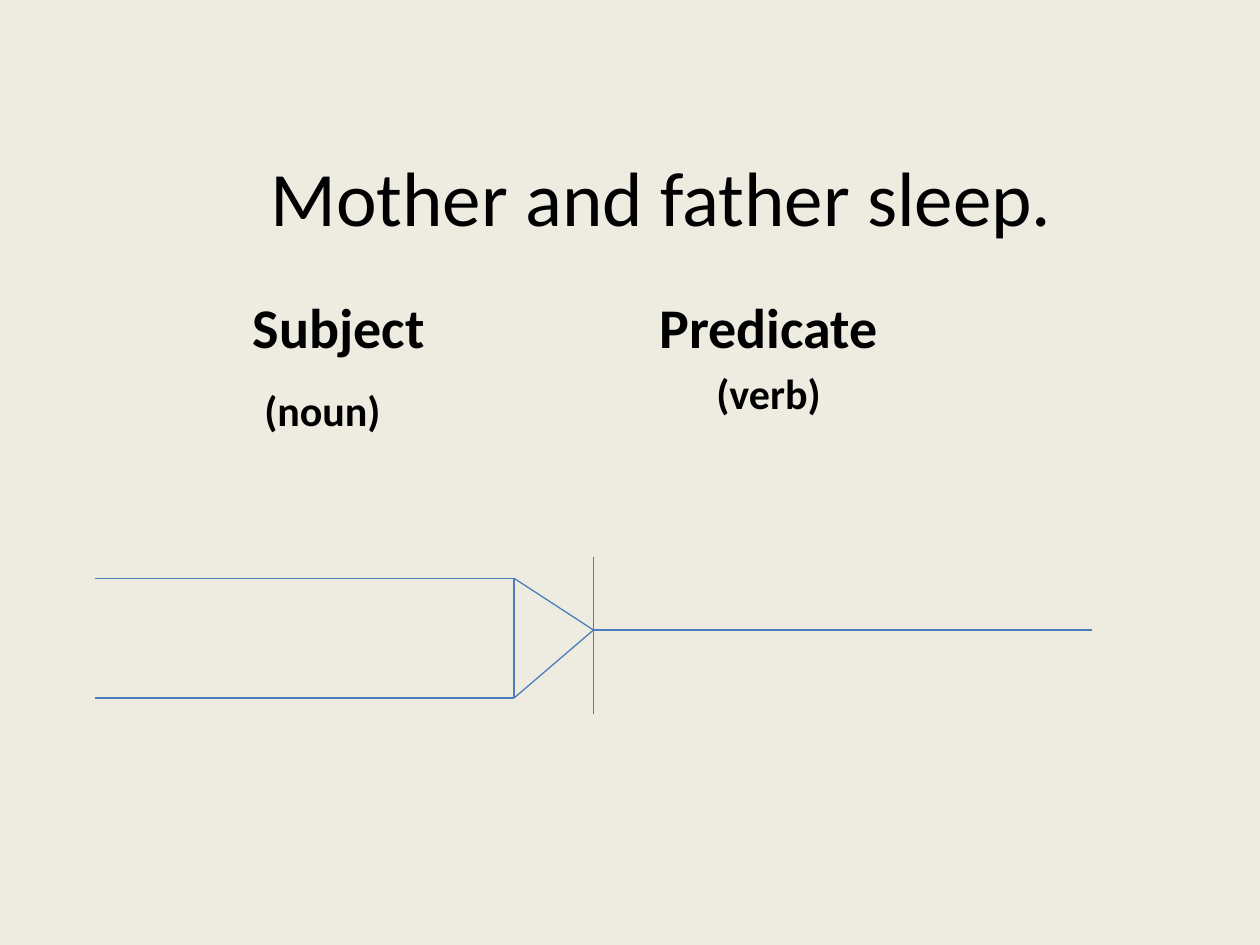
from typing import NamedTuple

from lxml.etree import SubElement
from pptx import Presentation
from pptx.dml.color import RGBColor
from pptx.enum.shapes import MSO_CONNECTOR
from pptx.enum.text import MSO_ANCHOR, PP_ALIGN
from pptx.oxml.ns import qn
from pptx.util import Inches, Pt

BACKGROUND = RGBColor(0xEE, 0xEC, 0xE1)
BLACK = RGBColor(0, 0, 0)
BLUE = RGBColor(0x4B, 0x7E, 0xBC)


class Label(NamedTuple):
    text: str
    center_x: float
    center_y: float
    size: int


class Line(NamedTuple):
    x1: float
    y1: float
    x2: float
    y2: float


LEFT, FORK, DIVIDER, RIGHT = 0.75, 4.08, 4.71, 8.67
TOP, MIDDLE, BOTTOM = 4.59, 5, 5.54

LABELS = [
    Label("Subject", 2.69, 2.59, 32),
    Label("(noun)", 2.56, 3.25, 24),
    Label("Predicate", 6.1, 2.59, 32),
    Label("(verb)", 6.1, 3.12, 24),
]
BRANCHES = [
    line
    for y in (TOP, BOTTOM)
    for line in (Line(LEFT, y, FORK, y), Line(FORK, y, DIVIDER, MIDDLE))
]
DIAGRAM = BRANCHES + [
    Line(FORK, TOP, FORK, BOTTOM),
    Line(DIVIDER, MIDDLE, RIGHT, MIDDLE),
    Line(DIVIDER, 4.42, DIVIDER, 5.67),
]


def add_text(s, text: str, *, left: float, top: float, width: float,
             height: float, size: int, bold: bool = False) -> None:
    tf = s.shapes.add_textbox(
        Inches(left), Inches(top), Inches(width), Inches(height)
    ).text_frame
    tf.word_wrap = True
    tf.vertical_anchor = MSO_ANCHOR.MIDDLE
    p = tf.paragraphs[0]
    p.alignment = PP_ALIGN.CENTER
    r = p.add_run()
    r.text = text
    r.font.name = "Calibri"
    r.font.size = Pt(size)
    r.font.bold = bold
    r.font.color.rgb = BLACK


def add_label(s, label: Label) -> None:
    width, height = 3, 0.6
    add_text(s, label.text, left=label.center_x - width / 2,
             top=label.center_y - height / 2, width=width, height=height,
             size=label.size, bold=True)


def add_line(s, line: Line) -> None:
    sp = s.shapes.add_connector(MSO_CONNECTOR.STRAIGHT, *map(Inches, line))
    sp.line.color.rgb = BLUE
    sp.line.width = Pt(0.75)
    SubElement(sp._element.spPr, qn("a:effectLst"))


def main() -> None:
    prs = Presentation()
    prs.slide_width, prs.slide_height = Inches(10), Inches(7.5)
    s = prs.slides.add_slide(prs.slide_layouts[6])
    s.background.fill.solid()
    s.background.fill.fore_color.rgb = BACKGROUND

    add_text(s, "Mother and father sleep.", left=1, top=0.75,
             width=8.5, height=1.61, size=44)
    for label in LABELS:
        add_label(s, label)
    for line in DIAGRAM:
        add_line(s, line)
    prs.save("out.pptx")


if __name__ == "__main__":
    main()
